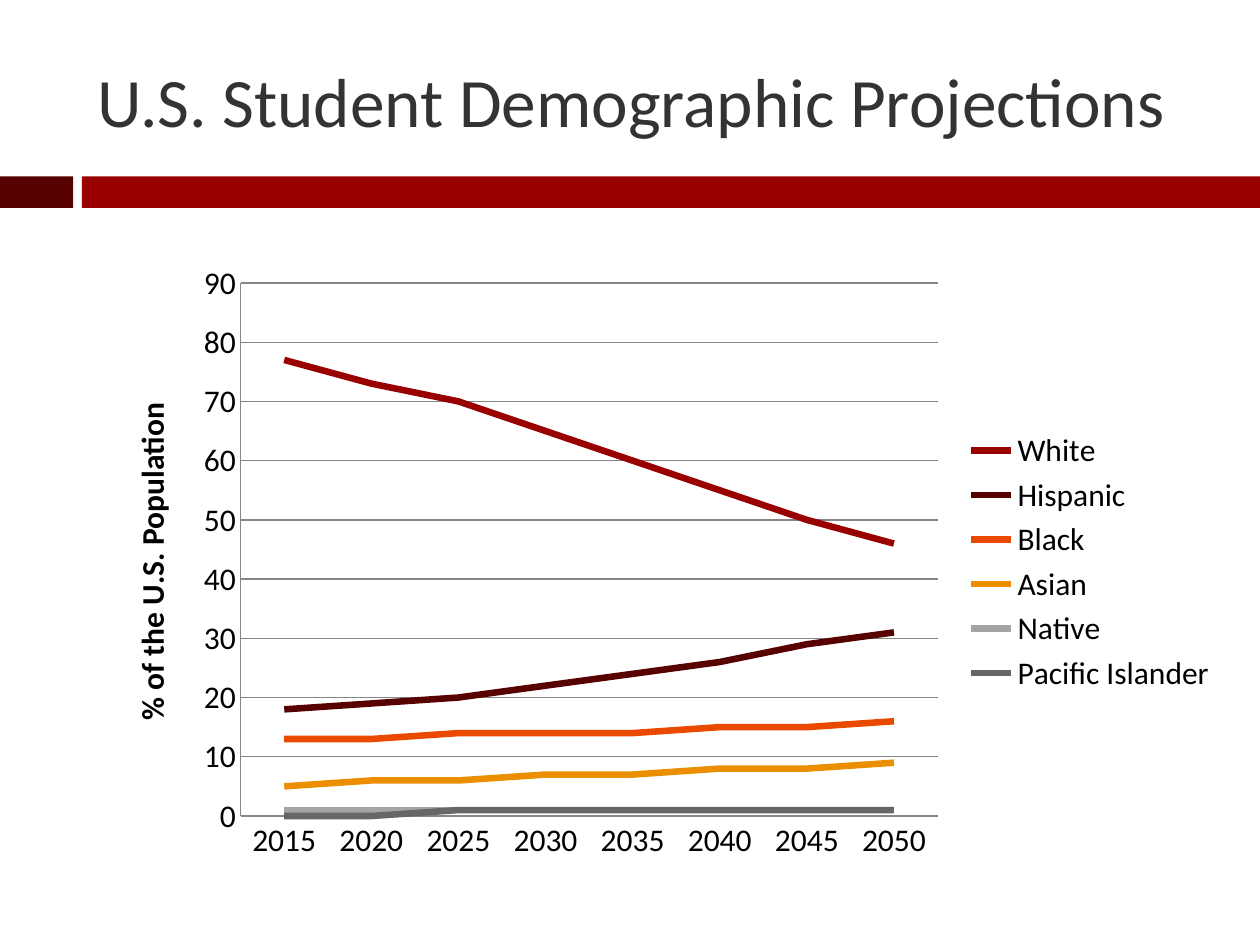
from lxml.etree import SubElement
from pptx import Presentation
from pptx.chart.data import CategoryChartData
from pptx.dml.color import RGBColor
from pptx.enum.chart import XL_CHART_TYPE, XL_LEGEND_POSITION, XL_MARKER_STYLE, XL_TICK_MARK
from pptx.enum.shapes import MSO_SHAPE
from pptx.enum.text import MSO_ANCHOR, PP_ALIGN
from pptx.oxml.ns import qn
from pptx.util import Pt

# Content
TITLE = "U.S. Student Demographic Projections"
AXIS_TITLE = "% of the U.S. Population"
YEARS = [str(year) for year in range(2015, 2051, 5)]
GROUPS = [
    ("White", "990000", (77, 73, 70, 65, 60, 55, 50, 46)),
    ("Hispanic", "580101", (18, 19, 20, 22, 24, 26, 29, 31)),
    ("Black", "E94A00", (13, 13, 14, 14, 14, 15, 15, 16)),
    ("Asian", "EB8F00", (5, 6, 6, 7, 7, 8, 8, 9)),
    ("Native", "A4A4A4", (1, 1, 1, 1, 1, 1, 1, 1)),
    ("Pacific Islander", "666666", (0, 0, 1, 1, 1, 1, 1, 1)),
]

# Theme and geometry, in points
THEME = {
    "font": "Calibri", "title": "333333", "text": "000000", "grid": "868686",
    "dark": "580101", "red": "990000",
    "title_size": 39.6, "chart_size": 18, "line": 3.75, "hairline": 0.75,
}
SLIDE = (720, 540)
TITLE_BOX = (48.24, 18, 642.24, 77.76)
CHART_BOX = (60.48, 144, 642.24, 354.24)
PLOT = {"x": 0.12, "y": 0.05, "w": 0.62, "h": 0.86}
BAND_TOP, BAND_HEIGHT = 100.8, 18
BANDS = [(0, 41.76, "dark"), (46.8, 673.2, "red")]


def rgb(value):
    return RGBColor.from_string(value)


def points(box):
    return [Pt(v) for v in box]


def style_font(font, size, color, bold=False):
    values = {"name": THEME["font"], "size": Pt(size), "bold": bold}
    for key, value in values.items():
        setattr(font, key, value)
    font.color.rgb = rgb(color)


def style_line(line, color, width):
    line.color.rgb = rgb(color)
    line.width = Pt(width)


prs = Presentation()
prs.slide_width, prs.slide_height = points(SLIDE)
s = prs.slides.add_slide(prs.slide_layouts[5])

# Header bands
for left, width, color in BANDS:
    sp = s.shapes.add_shape(MSO_SHAPE.RECTANGLE,
                            *points((left, BAND_TOP, width, BAND_HEIGHT)))
    sp.shadow.inherit = False
    sp.fill.solid()
    sp.fill.fore_color.rgb = rgb(THEME[color])
    sp.line.fill.background()

# Title
title = s.shapes.title
for key, value in zip(("left", "top", "width", "height"), points(TITLE_BOX)):
    setattr(title, key, value)
tf = title.text_frame
tf.vertical_anchor = MSO_ANCHOR.MIDDLE
p = tf.paragraphs[0]
p.alignment = PP_ALIGN.LEFT
r = p.add_run()
r.text = TITLE
style_font(r.font, THEME["title_size"], THEME["title"])

# Line chart
data = CategoryChartData()
data.categories = YEARS
for name, _, values in GROUPS:
    data.add_series(name, values)
chart = s.shapes.add_chart(XL_CHART_TYPE.LINE, *points(CHART_BOX), data).chart
chart.has_title = False
style_font(chart.font, THEME["chart_size"], THEME["text"])
for series, (_, color, _) in zip(chart.plots[0].series, GROUPS):
    series.smooth = False
    series.marker.style = XL_MARKER_STYLE.NONE
    style_line(series.format.line, color, THEME["line"])
chart.plots[0].vary_by_categories = False

# Axes
axes = chart.category_axis, chart.value_axis
for axis in axes:
    axis.major_tick_mark = axis.minor_tick_mark = XL_TICK_MARK.NONE
    style_line(axis.format.line, THEME["grid"], THEME["hairline"])
value_axis = chart.value_axis
for key, value in {"minimum_scale": 0, "maximum_scale": 90, "major_unit": 10,
                   "has_major_gridlines": True}.items():
    setattr(value_axis, key, value)
style_line(value_axis.major_gridlines.format.line, THEME["grid"], THEME["hairline"])
p = value_axis.axis_title.text_frame.paragraphs[0]
r = p.add_run()
r.text = AXIS_TITLE
style_font(r.font, THEME["chart_size"], THEME["text"], bold=True)

# Legend
chart.has_legend = True
chart.legend.position = XL_LEGEND_POSITION.RIGHT
chart.legend.include_in_layout = False

# Inner plot area
plot_area = chart.plots[0].series[0].format.line  # keep series lines formatted
area = chart.element.find(".//" + qn("c:plotArea"))
layout = area.find(qn("c:layout"))
if layout is None:
    layout = SubElement(area, qn("c:layout"))
    area.insert(0, layout)
manual = SubElement(layout, qn("c:manualLayout"))
settings = {"layoutTarget": "inner", "xMode": "edge", "yMode": "edge", **PLOT}
for tag, value in settings.items():
    SubElement(manual, qn("c:" + tag)).set("val", str(value))

prs.save("out.pptx")
